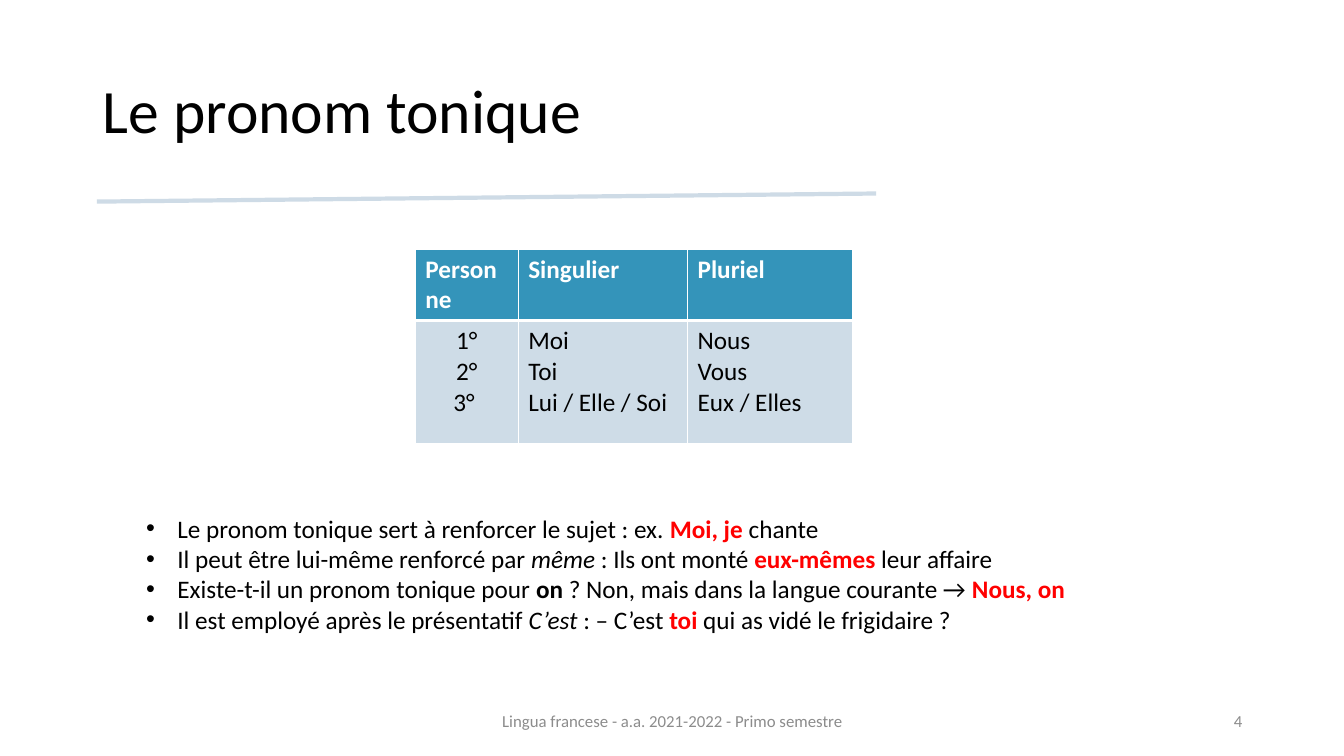
from dataclasses import dataclass
from pptx import Presentation
from pptx.dml.color import RGBColor as Rgb
from pptx.enum.shapes import MSO_CONNECTOR as Conn
from pptx.enum.text import MSO_ANCHOR as Anchor, MSO_AUTO_SIZE as Fit, PP_ALIGN as Align
from pptx.oxml import parse_xml
from pptx.oxml.ns import nsdecls
from pptx.oxml.xmlchemy import OxmlElement as Elem
from pptx.util import Pt

SCALE = 9144


@dataclass(frozen=True)
class Theme:
    font: str = "Calibri"
    ink: str = "000000"
    paper: str = "FFFFFF"
    accent: str = "FF0000"
    head: str = "3494BA"
    band: str = "CEDCE7"
    rule: str = "CEDBE6"
    muted: str = "8C8C8C"
    big: int = 44
    text: int = 18
    small: int = 12


THEME = Theme()
STYLES = {
    "plain": {},
    "bold": {"bold": True},
    "ital": {"italic": True},
    "key": {"bold": True, "color": THEME.accent},
}
HEADS = ["Personne", "Singulier", "Pluriel"]
FORMS = [
    ["1°", "2°", "3° "],
    ["Moi", "Toi", "Lui / Elle / Soi"],
    ["Nous", "Vous", "Eux / Elles"],
]
NOTES = [
    [("Le pronom tonique sert à renforcer le sujet : ex. ", "plain"),
     ("Moi, je ", "key"), ("chante", "plain")],
    [("Il peut être lui-même renforcé par ", "plain"), ("même", "ital"),
     (" : Ils ont monté ", "plain"), ("eux-mêmes ", "key"),
     ("leur affaire", "plain")],
    [("Existe-t-il un pronom tonique pour ", "plain"), ("on", "bold"),
     (" ? Non, mais dans la langue courante → ", "plain"),
     ("Nous, on", "key")],
    [("Il est employé après le présentatif ", "plain"), ("C’est", "ital"),
     (" : – C’est ", "plain"), ("toi", "key"),
     (" qui as vidé le frigidaire ?", "plain")],
]


def px(n):
    return n * SCALE


def apply(obj, vals):
    for name, val in vals.items():
        setattr(obj, name, val)


def place(shape, box):
    apply(shape, dict(zip(("left", "top", "width", "height"), map(px, box))))


def write(para, text, size, color=THEME.ink, **vals):
    run = para.add_run()
    run.text = text
    base = {"name": THEME.font, "size": Pt(size), "bold": False, "italic": False}
    apply(run.font, base | vals)
    run.font.color.rgb = Rgb.from_string(color)


def lines(frame, count):
    return [frame.paragraphs[0]] + [frame.add_paragraph() for _ in range(count - 1)]


def title(slide, box):
    shape = slide.shapes.title
    place(shape, box)
    apply(shape.text_frame, {"vertical_anchor": Anchor.MIDDLE, "auto_size": Fit.NONE})
    para = shape.text_frame.paragraphs[0]
    apply(para, {"alignment": Align.LEFT, "line_spacing": 0.9})
    write(para, "Le pronom tonique", THEME.big)


def rule(slide, box):
    x, y, w, h = box
    line = slide.shapes.add_connector(Conn.STRAIGHT, px(x), px(y + h), px(x + w), px(y))
    line.line.width = Pt(3)
    line.line.color.rgb = Rgb.from_string(THEME.rule)
    line._element.spPr.append(Elem("a:effectLst"))


def border(cell, widths):
    props = cell._tc.get_or_add_tcPr()
    for side, width in zip("LRTB", widths):
        props.append(parse_xml(
            f'<a:ln{side} {nsdecls("a")} w="{Pt(width)}"><a:solidFill>'
            f'<a:srgbClr val="{THEME.paper}"/></a:solidFill></a:ln{side}>'))


def fill(cell, items, back, widths, align, **vals):
    border(cell, widths)
    cell.fill.solid()
    cell.fill.fore_color.rgb = Rgb.from_string(back)
    for para, text in zip(lines(cell.text_frame, len(items)), items):
        para.alignment = align
        write(para, text, THEME.text, **vals)


def table(slide, box, cols, rows):
    grid = slide.shapes.add_table(len(rows), len(cols), *map(px, box)).table
    for col, width in zip(grid.columns, cols):
        col.width = px(width)
    for row, height in zip(grid.rows, rows):
        row.height = px(height)
    for i, (head, forms) in enumerate(zip(HEADS, FORMS)):
        fill(grid.cell(0, i), [head], THEME.head, (1, 1, 1, 3), Align.LEFT,
             color=THEME.paper, bold=True)
        fill(grid.cell(1, i), forms, THEME.band, (1, 1, 3, 1),
             Align.LEFT if i else Align.CENTER)


def bullet(para, indent):
    props = para._p.get_or_add_pPr()
    props.set("marL", str(px(indent)))
    props.set("indent", str(-px(indent)))
    for tag, key, val in (("a:buFont", "typeface", "Arial"), ("a:buChar", "char", "•")):
        mark = Elem(tag)
        mark.set(key, val)
        props.append(mark)


def notes(slide, box):
    body = slide.placeholders[1]
    place(body, box)
    frame = body.text_frame
    apply(frame, {"vertical_anchor": Anchor.TOP, "auto_size": Fit.NONE})
    for para, runs in zip(lines(frame, len(NOTES)), NOTES):
        apply(para, {"alignment": Align.LEFT, "line_spacing": 1.0,
                     "space_before": Pt(0), "space_after": Pt(0)})
        bullet(para, 31)
        for text, style in runs:
            write(para, text, THEME.text, **STYLES[style])


def footer(slide, box, text, align):
    frame = slide.shapes.add_textbox(*map(px, box)).text_frame
    apply(frame, {"word_wrap": True, "vertical_anchor": Anchor.MIDDLE})
    para = frame.paragraphs[0]
    para.alignment = align
    write(para, text, THEME.small, color=THEME.muted)


def main():
    deck = Presentation()
    apply(deck, {"slide_width": px(1333), "slide_height": px(750)})
    slide = deck.slides.add_slide(deck.slide_layouts[1])
    title(slide, (92, 40, 1150, 145))
    table(slide, (412, 247, 434, 192), (102, 168, 164), (70, 122))
    notes(slide, (135, 504, 951, 162))
    rule(slide, (96, 192, 773, 8))
    footer(slide, (442, 695, 450, 40),
           "Lingua francese - a.a. 2021-2022 - Primo semestre", Align.CENTER)
    footer(slide, (942, 695, 300, 40), "4", Align.RIGHT)
    deck.save("out.pptx")


if __name__ == "__main__":
    main()
